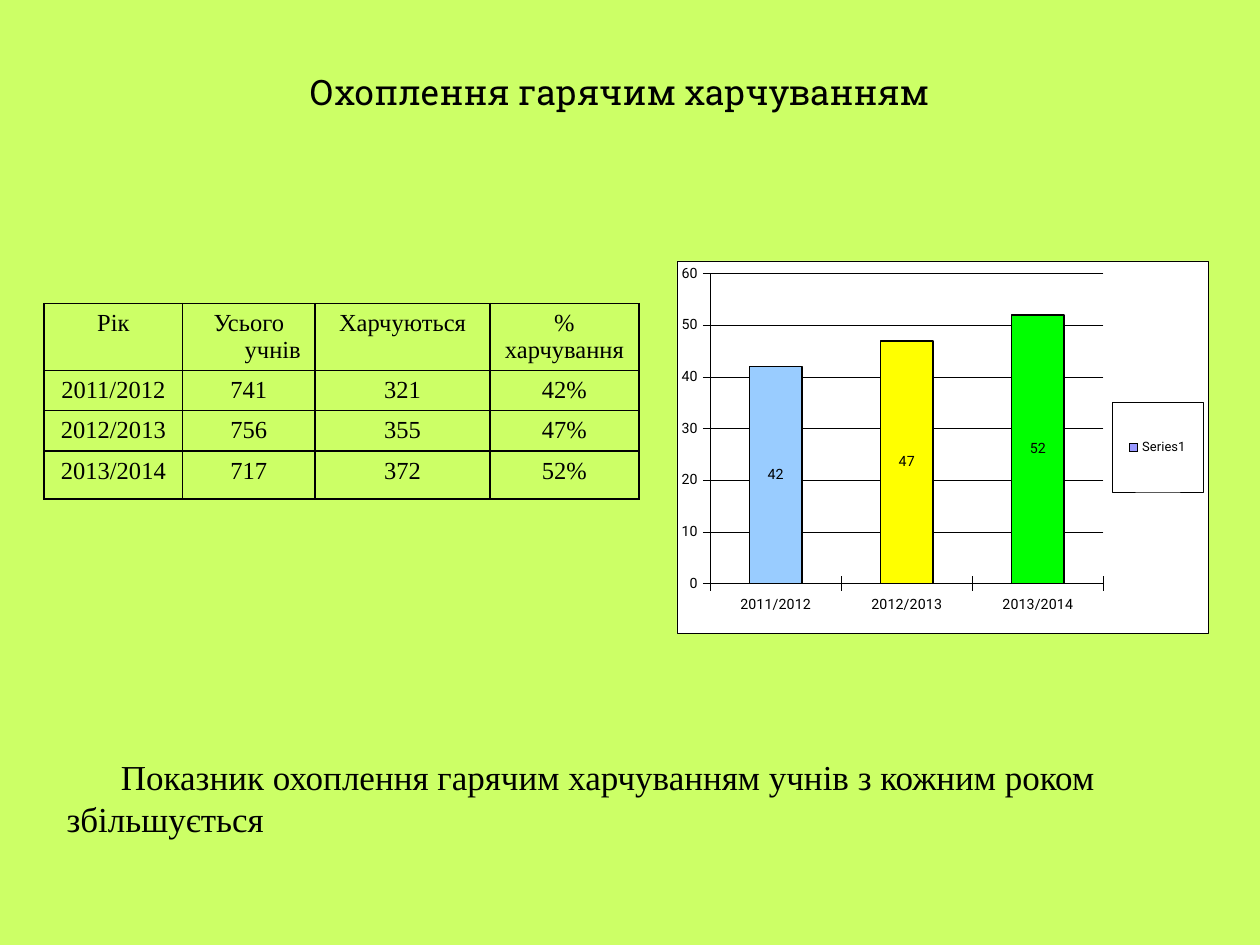
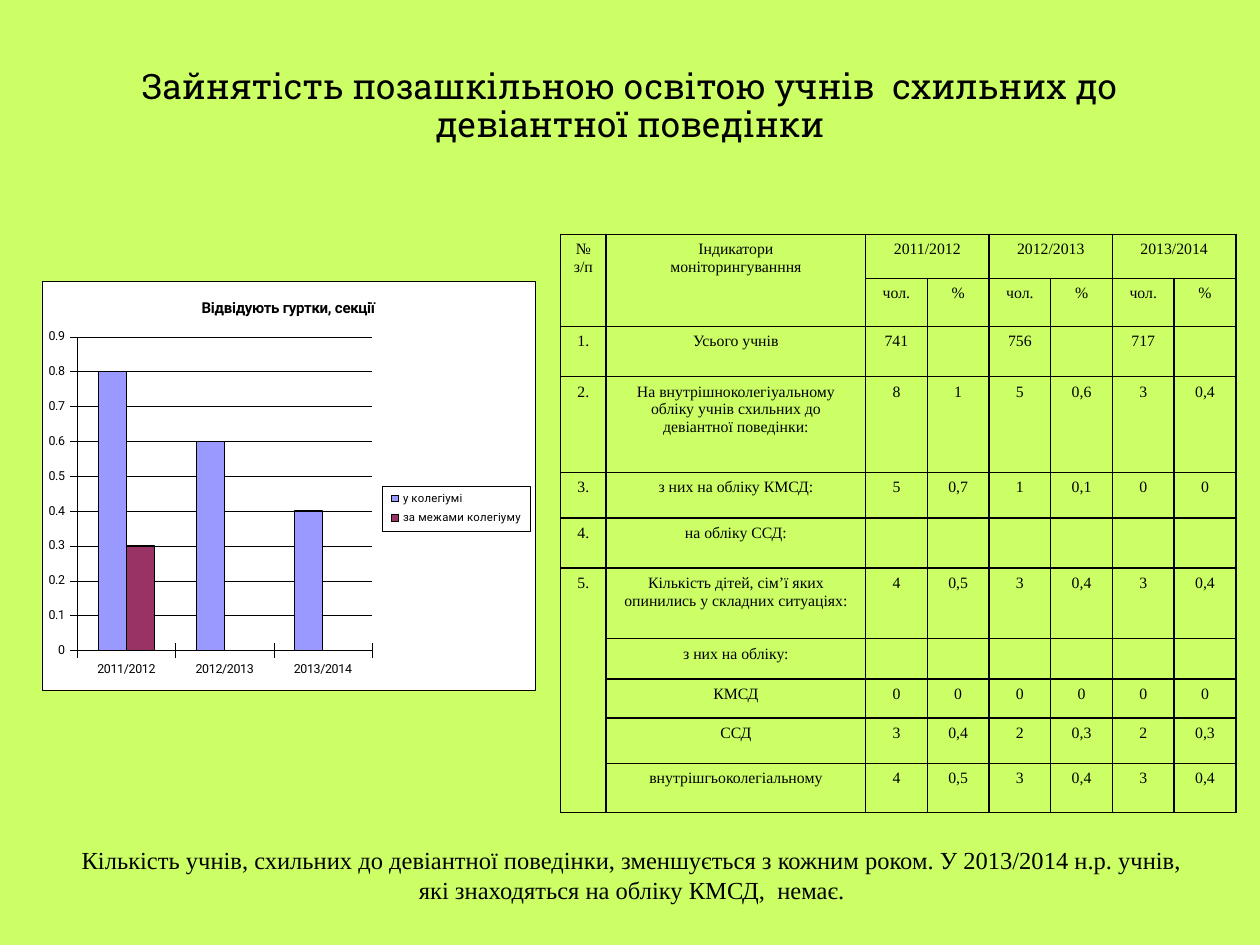
from lxml import etree
from pptx import Presentation
from pptx import util as u
from pptx.chart import data
from pptx.dml.color import RGBColor
from pptx.enum import chart as ce
from pptx.enum import text as te
from pptx.oxml import ns, parse_xml

LIME = RGBColor(0xCC, 0xFF, 0x66)
BLACK = RGBColor(0, 0, 0)
BLUE = RGBColor(0x99, 0x99, 0xFF)
PLUM = RGBColor(0x99, 0x33, 0x66)
SKY = RGBColor(0x99, 0xCC, 0xFF)
YELLOW = RGBColor(0xFF, 0xFF, 0)
GREEN = RGBColor(0, 0xFF, 0)
SLAB, SANS, SERIF = "Roboto Slab", "Roboto", "Times New Roman"
WIDE, HIGH = u.Inches(10), u.Inches(7.5)
COLS, ROWS = 100, 75
MID, LEFT = te.PP_ALIGN.CENTER, te.PP_ALIGN.LEFT
YEARS = ["2011/2012", "2012/2013", "2013/2014"]

MEALS = [
    ["Рік", "Усього учнів", "Харчуються", "%\nхарчування"],
    [YEARS[0], "741", "321", "42%"],
    [YEARS[1], "756", "355", "47%"],
    [YEARS[2], "717", "372", "52%"],
]
GROUPS = [
    ["№ з/п", "Індикатори\nмоніторингуванння",
     YEARS[0], "", YEARS[1], "", YEARS[2], ""],
    ["", ""] + ["чол.", "%"] * 3,
    ["1.", "Усього учнів", "741", "", "756", "", "717", ""],
    ["2.", "На внутрішноколегіуальному обліку учнів схильних до "
     "девіантної поведінки:", "8", "1", "5", "0,6", "3", "0,4"],
    ["3.", "з них на обліку КМСД:", "5", "0,7", "1", "0,1", "0", "0"],
    ["4.", "на обліку ССД:"] + [""] * 6,
    ["5.", "Кількість дітей, сім’ї яких опинились у складних ситуаціях:",
     "4", "0,5", "3", "0,4", "3", "0,4"],
    ["", "з них на обліку:"] + [""] * 6,
    ["", "КМСД"] + ["0"] * 6,
    ["", "ССД", "3", "0,4", "2", "0,3", "2", "0,3"],
    ["", "внутрішгьоколегіальному", "4", "0,5", "3", "0,4", "3", "0,4"],
]


def apply(obj, vals):
    """Set each named value on the object."""
    for key, val in vals.items():
        setattr(obj, key, val)


def grid(x, y, w, h):
    """Turn grid columns and rows into lengths."""
    return [int(n * full / parts) for n, full, parts in
            zip((x, y, w, h), (WIDE, HIGH) * 2, (COLS, ROWS) * 2)]


def style(font, face, size, bold=False):
    """Give a font its face, size and black colour."""
    apply(font, {"name": face, "size": u.Pt(size), "bold": bold})
    font.color.rgb = BLACK


def write(frame, lines, face, size, form=None):
    """Fill a text frame with one paragraph per line."""
    for i, line in enumerate(lines):
        para = frame.paragraphs[0] if i == 0 else frame.add_paragraph()
        apply(para, {"alignment": MID, **(form or {})})
        if line:
            run = para.add_run()
            run.text = line
            style(run.font, face, size)
        else:
            para._p.get_or_add_endParaRPr().set("sz", str(size * 100))


def add_title(slide, words, area):
    """Place and fill the title."""
    shape = slide.shapes.title
    apply(shape, dict(zip(("left", "top", "width", "height"), grid(*area))))
    apply(shape.text_frame, {"word_wrap": True, "auto_size": te.MSO_AUTO_SIZE.NONE,
                             "vertical_anchor": te.MSO_ANCHOR.MIDDLE})
    write(shape.text_frame, [words], SLAB, 20, {"line_spacing": 0.9})


def add_note(slide, lines, area, size):
    """Add the closing remark and return its frame."""
    frame = slide.shapes.add_textbox(*grid(*area)).text_frame
    frame.word_wrap = True
    write(frame, lines, SERIF, size)
    return frame


def edge(cell):
    """Draw thin black borders round a cell."""
    props = cell._tc.get_or_add_tcPr()
    for i, side in enumerate(("lnL", "lnR", "lnT", "lnB")):
        props.insert(i, parse_xml(
            f'<a:{side} {ns.nsdecls("a")} w="12700"><a:solidFill>'
            f'<a:srgbClr val="{BLACK}"/></a:solidFill></a:{side}>'))


def add_table(slide, rows, spot, wides, highs, size, pad, hang=0):
    """Add a bordered table and return it."""
    area = grid(*spot, sum(wides), sum(highs))
    table = slide.shapes.add_table(len(rows), len(wides), *area).table
    apply(table, {"first_row": False, "horz_banding": False})
    for col, wide in zip(table.columns, wides):
        col.width = grid(0, 0, wide, 0)[2]
    for row, high, words in zip(table.rows, highs, rows):
        row.height = grid(0, 0, 0, high)[3]
        for cell, word in zip(row.cells, words):
            apply(cell, {"margin_left": u.Inches(pad), "margin_right": u.Inches(pad)})
            write(cell.text_frame, word.split("\n"), SERIF, size)
            if hang:
                for para in cell.text_frame.paragraphs:
                    props = para._p.get_or_add_pPr()
                    props.set("marL", str(u.Inches(hang)))
                    props.set("indent", str(-u.Inches(hang)))
            cell.fill.background()
            edge(cell)
    return table


def layout(owner, spot, index, inner=False):
    """Fix a chart part at shares of the chart's size."""
    for old in owner.findall(ns.qn("c:layout")):
        owner.remove(old)
    node = etree.Element(ns.qn("c:layout"))
    part = etree.SubElement(node, ns.qn("c:manualLayout"))
    vals = [("layoutTarget", "inner")] if inner else []
    vals += [("xMode", "edge"), ("yMode", "edge"), *zip("xywh", spot)]
    for key, val in vals:
        etree.SubElement(part, ns.qn(f"c:{key}")).set("val", str(val))
    owner.insert(index, node)


def frame_box(owner, thin):
    """Give a chart part a white fill and a thin line."""
    owner.find(ns.qn("c:txPr")).addprevious(parse_xml(
        f'<c:spPr {ns.nsdecls("c", "a")}><a:solidFill><a:srgbClr val="FFFFFF"/>'
        f'</a:solidFill><a:ln w="{u.Pt(thin)}"><a:solidFill>'
        f'<a:srgbClr val="{BLACK}"/></a:solidFill></a:ln></c:spPr>'))


def outline(line, width):
    """Colour a line black at the given width."""
    line.color.rgb = BLACK
    line.width = u.Pt(width)


def add_chart(slide, kind, area, series, top, step, size, key, thin, plot, box):
    """Add a column chart with its legend and return it."""
    info = data.CategoryChartData()
    info.categories = YEARS
    for name, vals, _ in series:
        info.add_series(name, vals)
    chart = slide.shapes.add_chart(kind, *grid(*area), info).chart
    style(chart.font, SANS, size)
    apply(chart, {"has_title": False, "has_legend": True})
    frame_box(chart._chartSpace, thin)
    layout(chart._chartSpace.chart.plotArea, plot, 0, True)
    for axis in (chart.category_axis, chart.value_axis):
        apply(axis, {"major_tick_mark": ce.XL_TICK_MARK.CROSS,
                     "minor_tick_mark": ce.XL_TICK_MARK.NONE})
        style(axis.tick_labels.font, SANS, size)
        outline(axis.format.line, thin)
    chart.category_axis.tick_label_position = ce.XL_TICK_LABEL_POSITION.LOW
    apply(chart.value_axis, {"minimum_scale": 0, "maximum_scale": top,
                             "major_unit": step, "has_major_gridlines": True})
    outline(chart.value_axis.major_gridlines.format.line, thin)
    stack = kind == ce.XL_CHART_TYPE.COLUMN_STACKED
    apply(chart.plots[0], {"gap_width": 150, "overlap": 100 if stack else 0,
                           "vary_by_categories": False})
    for bars, (_, _, hue) in zip(chart.plots[0].series, series):
        paint(bars, hue, 0.75)
    apply(chart.legend, {"position": ce.XL_LEGEND_POSITION.RIGHT,
                         "include_in_layout": False})
    style(chart.legend.font, SANS, key)
    frame_box(chart.legend._element, thin)
    layout(chart.legend._element, box, 1)
    return chart


def paint(bars, hue, width):
    """Fill and outline a series or a point."""
    bars.format.fill.solid()
    bars.format.fill.fore_color.rgb = hue
    outline(bars.format.line, width)


def meals(slide):
    """Build the slide on hot meals."""
    add_title(slide, "Охоплення гарячим харчуванням", (4.2, 4, 90, 7))
    chart = add_chart(
        slide, ce.XL_CHART_TYPE.COLUMN_STACKED, (53.7, 20.7, 42.2, 29.6),
        [("Series1", [42, 47, 52], BLUE)], 60, 10, 8.1, 7.4, 0.21,
        (0.063, 0.034, 0.74, 0.832), (0.82, 0.38, 0.17, 0.24))
    bars = chart.plots[0].series[0]
    for i, hue in enumerate((SKY, YELLOW, GREEN)):
        paint(bars.points[i], hue, 0.85)
    labels = bars.data_labels
    apply(labels, {"show_value": True, "position": ce.XL_LABEL_POSITION.CENTER})
    style(labels.font, SANS, 8.1)
    add_table(slide, MEALS, (3.5, 24.1), [11, 10.5, 13.9, 11.8],
              [5.3, 3.2, 3.2, 3.8], 14, 0.1, 0.38)
    note = add_note(slide, ["Показник охоплення гарячим харчуванням учнів з кожним роком ",
                            "збільшується"], (4.3, 59.5, 88.6, 7.7), 20)
    note.paragraphs[1].alignment = LEFT


def clubs(slide):
    """Build the slide on clubs and pupils at risk."""
    add_title(slide, "Зайнятість позашкільною освітою учнів  схильних до "
              "девіантної поведінки", (5, 4.5, 90, 8))
    chart = add_chart(
        slide, ce.XL_CHART_TYPE.COLUMN_CLUSTERED, (3.3, 22.3, 39.2, 32.5),
        [("у колегіумі", [0.8, 0.6, 0.4], BLUE),
         ("за межами колегіуму", [0.3, 0, 0], PLUM)],
        0.9, 0.1, 7.1, 6.5, 0.19,
        (0.072, 0.136, 0.597, 0.767), (0.69, 0.5, 0.3, 0.11))
    head = chart.chart_title.text_frame
    head.text = "Відвідують гуртки, секції"
    style(head.paragraphs[0].runs[0].font, SANS, 8.6, True)
    table = add_table(slide, GROUPS, (44.5, 18.6), [3.6, 20.6] + [4.9] * 6,
                      [3.5, 3.8, 4, 7.6, 3.6, 4, 5.6, 3.2, 3.1, 3.6, 3.9], 9, 0.09)
    spans = [(0, 0, 1, 0), (0, 1, 1, 1), (6, 0, 10, 0)]
    spans += [(0, col, 0, col + 1) for col in (2, 4, 6)]
    for top, left, end, right in spans:
        table.cell(top, left).merge(table.cell(end, right))
    add_note(slide, ["Кількість учнів, схильних до девіантної поведінки, зменшується "
                     "з кожним роком. У 2013/2014 н.р. учнів, які знаходяться на "
                     "обліку КМСД,  немає."], (5.1, 66.6, 90.1, 5.7), 14)


def main():
    """Build and save the slides."""
    deck = Presentation()
    apply(deck, {"slide_width": WIDE, "slide_height": HIGH})
    back = deck.slide_master.background.fill
    back.solid()
    back.fore_color.rgb = LIME
    for build in (meals, clubs):
        build(deck.slides.add_slide(deck.slide_layouts[5]))
    deck.save("out.pptx")


if __name__ == "__main__":
    main()
